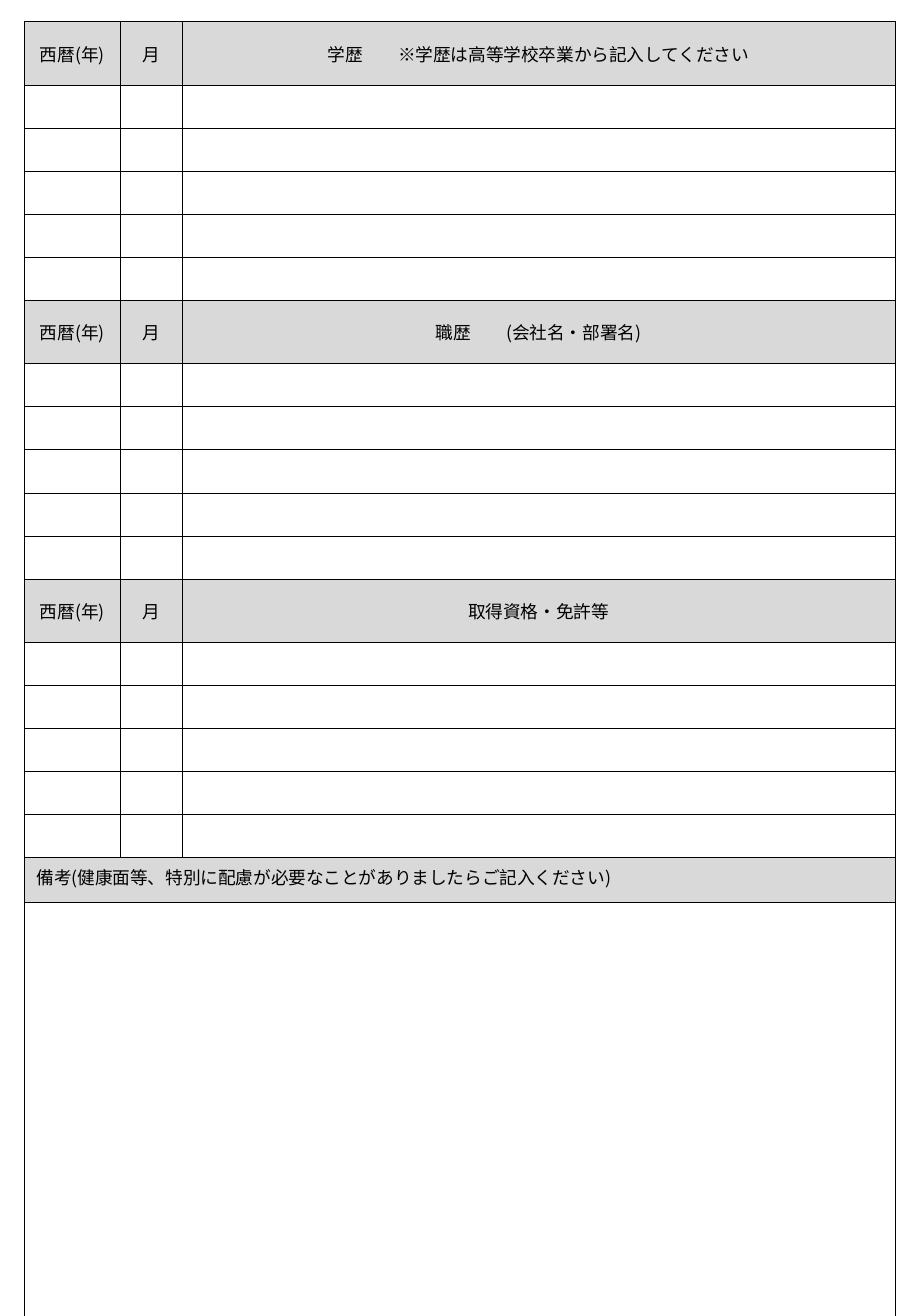
from lxml import etree
from pptx import Presentation
from pptx.dml.color import RGBColor
from pptx.enum import text
from pptx.oxml import ns
from pptx.util import Inches, Pt

FONT = "Noto Sans CJK JP"
SIZE = Pt(10.5)
BLACK = RGBColor(0x00, 0x00, 0x00)
HEADER_GRAY = RGBColor(0xD9, 0xD9, 0xD9)

YEAR, MONTH = "西暦(年)", "月"
SECTIONS = [
    "学歴  ※学歴は高等学校卒業から記入してください".replace("  ", "　　"),
    "職歴　　(会社名・部署名)",
    "取得資格・免許等",
]
REMARKS = "備考(健康面等、特別に配慮が必要なことがありましたらご記入ください)"

ENTRIES = 5
SECTION_ROWS = ENTRIES + 1
ENTRY_ROWS = SECTION_ROWS * len(SECTIONS)
COLUMN_WIDTHS = [0.79, 0.51, 5.87]
TABLE_HEIGHT, REMARKS_HEADER, REMARKS_BODY = 10.53, 0.37, 3.78
ENTRY_HEIGHT = (TABLE_HEIGHT - REMARKS_HEADER - REMARKS_BODY) / ENTRY_ROWS


def add_child(parent, tag, **attributes):
    return etree.SubElement(parent, ns.qn(tag), attributes)


def add_borders(cell, width=Pt(0.5)):
    properties = cell._tc.get_or_add_tcPr()
    for index, side in enumerate(("a:lnL", "a:lnR", "a:lnT", "a:lnB")):
        line = etree.Element(ns.qn(side), w=str(int(width)))
        add_child(add_child(line, "a:solidFill"), "a:srgbClr", val=str(BLACK))
        properties.insert(index, line)


def format_blank(cell):
    """Draw an empty cell whose text size keeps the row at its set height."""
    add_borders(cell)
    cell.fill.background()
    para = cell.text_frame.paragraphs[0]
    add_child(para._p, "a:endParaRPr", sz=str(int(SIZE.pt * 100)))


def write_header(cell, words, align=text.PP_ALIGN.CENTER,
                 anchor=text.MSO_ANCHOR.MIDDLE):
    cell.fill.solid()
    cell.fill.fore_color.rgb = HEADER_GRAY
    cell.vertical_anchor = anchor
    para = cell.text_frame.paragraphs[0]
    para.alignment = align
    for ending in para._p.findall(ns.qn("a:endParaRPr")):
        para._p.remove(ending)
    span = para.add_run()
    span.text = words
    span.font.size = SIZE
    span.font.name = FONT
    span.font.color.rgb = BLACK
    add_child(span._r.get_or_add_rPr(), "a:ea", typeface=FONT)


def add_form_table(page):
    heights = [ENTRY_HEIGHT] * ENTRY_ROWS + [REMARKS_HEADER, REMARKS_BODY]
    table = page.shapes.add_table(
        len(heights), len(COLUMN_WIDTHS), Inches(0.2), Inches(0.18),
        Inches(sum(COLUMN_WIDTHS)), Inches(TABLE_HEIGHT)).table
    table.first_row = False
    table.horz_banding = False
    for column, width in zip(table.columns, COLUMN_WIDTHS):
        column.width = Inches(width)
    for row, height in zip(table.rows, heights):
        row.height = Inches(height)
        for cell in row.cells:
            format_blank(cell)
    return table


def main():
    deck = Presentation()
    deck.slide_width, deck.slide_height = Inches(7.5), Inches(10.83)
    page = deck.slides.add_slide(deck.slide_layouts[6])

    table = add_form_table(page)
    for section, heading in enumerate(SECTIONS):
        for column, words in enumerate((YEAR, MONTH, heading)):
            write_header(table.cell(section * SECTION_ROWS, column), words)

    last_column = len(COLUMN_WIDTHS) - 1
    for row in (ENTRY_ROWS, ENTRY_ROWS + 1):
        table.cell(row, 0).merge(table.cell(row, last_column))
    write_header(table.cell(ENTRY_ROWS, 0), REMARKS,
                 align=text.PP_ALIGN.LEFT, anchor=text.MSO_ANCHOR.TOP)

    deck.save("out.pptx")


if __name__ == "__main__":
    main()
